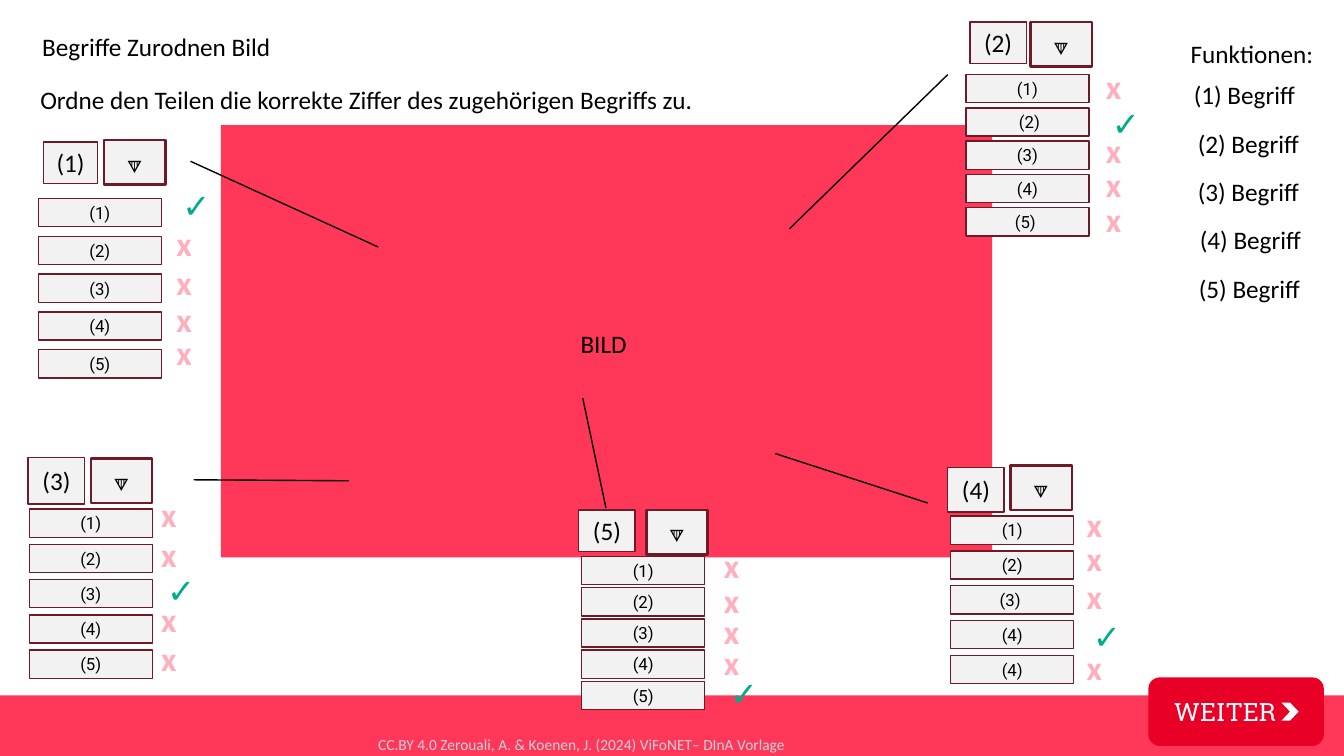
import pptx
import pptx.util
import pptx.dml.color
import pptx.enum.shapes
import pptx.enum.text
import pptx.oxml
import pptx.oxml.ns

Inches = pptx.util.Inches
Pt = pptx.util.Pt
RGBColor = pptx.dml.color.RGBColor
SHAPE = pptx.enum.shapes.MSO_SHAPE
LINE = pptx.enum.shapes.MSO_CONNECTOR.STRAIGHT
ANCHOR = pptx.enum.text.MSO_ANCHOR
ALIGN = pptx.enum.text.PP_ALIGN
FIT = pptx.enum.text.MSO_AUTO_SIZE

PINK = RGBColor(0xFF, 0x38, 0x59)
RED = RGBColor(0xE9, 0x00, 0x27)
WINE = RGBColor(0x70, 0x19, 0x27)
GRAY = RGBColor(0xF2, 0xF2, 0xF2)
BLACK = RGBColor(0, 0, 0)
WHITE = RGBColor(0xFF, 0xFF, 0xFF)
GREEN = RGBColor(0x00, 0xAC, 0x89)
ROSE = RGBColor(0xFF, 0xAF, 0xBD)
SILVER = RGBColor(0xCB, 0xD2, 0xDD)

NUMBERS = ["(1)", "(2)", "(3)", "(4)", "(5)"]

# Each panel: number, number box, arrow corner, rows (left, top, step), labels, right row, marks (left, tops)
PANELS = [
    ("(1)", (0.43, 1.41, 0.54, 0.41), (1.03, 1.39), (0.38, 1.97, 0.375),
     NUMBERS, 0, 1.63, [1.79, 2.16, 2.55, 2.92, 3.24]),
    ("(2)", (9.62, 0.22, 0.56, 0.41), (10.22, 0.22), (9.58, 0.74, 0.33),
     ["(1)", " (2)", "(3)", "(4)", "(5) "], 1, 10.85, [0.6, 0.97, 1.24, 1.58, 1.92]),
    ("(3)", (0.28, 4.54, 0.56, 0.46), (0.9, 4.55), (0.29, 5.05, 0.35),
     NUMBERS, 2, 1.48, [4.85, 5.25, 5.6, 5.89, 6.28]),
    ("(4)", (9.4, 4.64, 0.56, 0.44), (10.02, 4.62), (9.43, 5.12, 0.345),
     ["(1)", "(2)", "(3) ", "(4)", "(4)"], 3, 10.66, [4.95, 5.29, 5.66, 6.06, 6.37]),
    ("(5)", (5.74, 5.06, 0.56, 0.41), (6.41, 5.06), (5.77, 5.52, 0.31),
     NUMBERS, 4, 7.06, [5.36, 5.7, 6.01, 6.32, 6.63]),
]

LINES = [
    (1.89, 1.6, 3.75, 2.45),
    (7.83, 2.27, 9.4, 0.74),
    (1.92, 4.76, 3.46, 4.77),
    (7.69, 4.5, 9.2, 4.99),
    (5.78, 3.95, 6.01, 5.04),
]


def write(frame, text, size, font="Calibri", color=BLACK, align=ALIGN.LEFT, bold=False):
    para = frame.paragraphs[0]
    para.alignment = align
    run = para.add_run()
    run.text = text
    run.font.size = Pt(size)
    run.font.name = font
    run.font.bold = bold
    run.font.color.rgb = color
    return para


def add_box(slide, kind, place, fill, width=0):
    box = slide.shapes.add_shape(kind, *map(Inches, place))
    box.shadow.inherit = False
    box.fill.solid()
    box.fill.fore_color.rgb = fill
    if width:
        box.line.color.rgb = WINE
        box.line.width = Pt(width)
    else:
        box.line.fill.background()
    box.text_frame.vertical_anchor = ANCHOR.MIDDLE
    return box


def add_key(slide, place, text, size, font="Calibri", width=1):
    key = add_box(slide, SHAPE.RECTANGLE, place, GRAY, width)
    write(key.text_frame, text, size, font, align=ALIGN.CENTER)
    return key


def add_text(slide, place, text, size=18, color=BLACK, wrap=True, flush=True, **style):
    frame = slide.shapes.add_textbox(*map(Inches, place)).text_frame
    frame.word_wrap = wrap
    frame.auto_size = FIT.SHAPE_TO_FIT_TEXT
    para = write(frame, text, size, color=color, **style)
    if flush:
        frame.margin_left = frame.margin_right = 0
        frame.margin_top = frame.margin_bottom = 0
        para.line_spacing = 1.13


def add_mark(slide, left, top, right):
    if right:
        place, text, color = (left + 0.08, top, 0.25, 0.5), "✓", GREEN
    else:
        place, text, color = (left, top, 0.39, 0.5), "x", ROSE
    add_text(slide, place, text, 24, color, flush=False, align=ALIGN.CENTER, bold=True)


def add_panel(slide, number, place, arrow, rows, labels, right, left, tops):
    add_key(slide, place, number, 18)
    key = add_key(slide, (*arrow, 0.61, 0.44), "🔽", 20, "Roboto", 1.75)
    key.text_frame.vertical_anchor = ANCHOR.TOP
    key.text_frame.auto_size = FIT.SHAPE_TO_FIT_TEXT
    x, y, step = rows
    for i, (label, top) in enumerate(zip(labels, tops)):
        add_key(slide, (x, y + i * step, 1.22, 0.28), label, 12, "Roboto")
        add_mark(slide, left, top, i == right)


def add_line(slide, ends):
    line = slide.shapes.add_connector(LINE, *map(Inches, ends))
    line.line.color.rgb = BLACK
    line.line.width = Pt(1)
    props = line._element.spPr
    props.append(pptx.oxml.parse_xml(
        "<a:effectLst %s/>" % pptx.oxml.ns.nsdecls("a")))


def add_button(slide):
    box = add_box(slide, SHAPE.ROUNDED_RECTANGLE, (11.39, 6.72, 1.74, 0.68), RED)
    box.text_frame.margin_left = Inches(0.22)
    write(box.text_frame, "WEITER", 18, "Roboto Slab", WHITE)
    add_box(slide, SHAPE.CHEVRON, (12.71, 6.97, 0.17, 0.18), WHITE)


def main():
    deck = pptx.Presentation()
    deck.slide_width = Inches(13.33)
    deck.slide_height = Inches(7.5)
    slide = deck.slides.add_slide(deck.slide_layouts[6])

    add_box(slide, SHAPE.RECTANGLE, (0, 6.9, 13.33, 0.6), PINK)
    add_text(slide, (3.75, 7.27, 4.09, 0.2),
             "CC.BY 4.0 Zerouali, A. & Koenen, J. (2024) ViFoNET– DInA Vorlage",
             11, SILVER, wrap=False)
    image = add_box(slide, SHAPE.RECTANGLE, (2.19, 1.24, 7.65, 4.29), PINK)
    write(image.text_frame, "BILD ", 18, align=ALIGN.CENTER).line_spacing = 1.13
    add_button(slide)

    add_text(slide, (0.32, 0.26, 7.82, 0.4), "Begriffe Zurodnen Bild", flush=False)
    add_text(slide, (0.4, 0.8, 6.66, 0.32),
             "Ordne den Teilen die korrekte Ziffer des zugehörigen Begriffs zu.")
    add_text(slide, (11.81, 0.34, 1.23, 0.32), "Funktionen:", wrap=False)
    lefts = [11.84, 11.88, 11.88, 11.9, 11.89]
    for i, (number, left) in enumerate(zip(NUMBERS, lefts)):
        add_text(slide, (left, 0.75 + i * 0.48, 1.08, 0.32), number + " Begriff", wrap=False)

    for panel in PANELS:
        add_panel(slide, *panel)
    for ends in LINES:
        add_line(slide, ends)
    deck.save("out.pptx")


if __name__ == "__main__":
    main()
